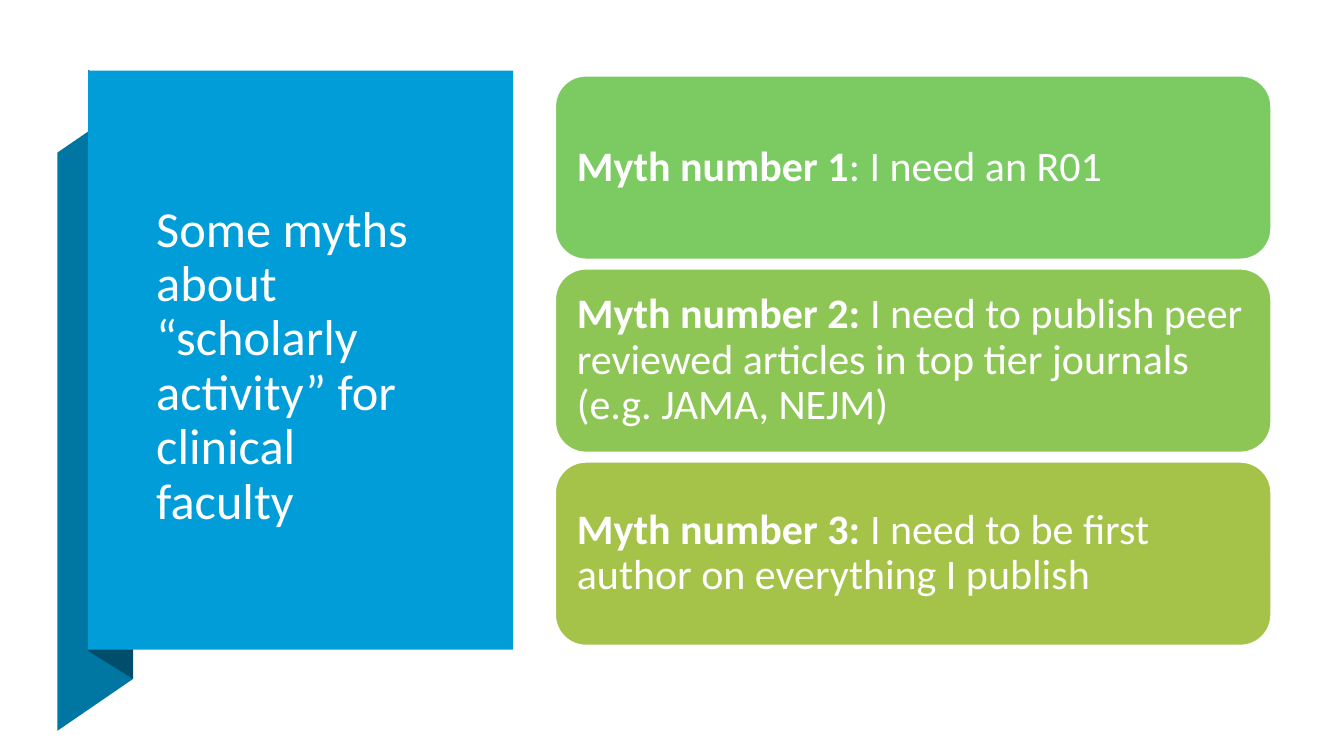
"""Build a slide listing three myths about scholarly activity beside a folded title ribbon."""

from dataclasses import dataclass

from pptx import Presentation
from pptx.dml.color import RGBColor
from pptx.enum.shapes import MSO_SHAPE
from pptx.enum.text import MSO_ANCHOR, MSO_AUTO_SIZE, PP_ALIGN
from pptx.util import Pt


@dataclass(frozen=True)
class Theme:
    font: str = "Calibri"
    title_size: int = 36
    myth_size: int = 30
    white: str = "FFFFFF"
    panel: str = "009DD9"
    ribbon: str = "0076A3"
    fold: str = "004E6C"
    myths: tuple = ("7CCA62", "8EC656", "A5C249")


theme = Theme()


def paint(shape, fill, line=None):
    shape.shadow.inherit = False
    shape.fill.solid()
    shape.fill.fore_color.rgb = RGBColor.from_string(fill)
    if line:
        shape.line.color.rgb = RGBColor.from_string(line)
        shape.line.width = Pt(1)
    else:
        shape.line.fill.background()


def write(shape, runs, size, frame_format):
    frame = shape.text_frame
    for name, value in frame_format.items():
        setattr(frame, name, value)
    paragraph = frame.paragraphs[0]
    paragraph.alignment = PP_ALIGN.LEFT
    paragraph.line_spacing = 0.9
    for text, bold in runs:
        run = paragraph.add_run()
        run.text = text
        font_format = {"name": theme.font, "size": Pt(size), "bold": bold}
        for name, value in font_format.items():
            setattr(run.font, name, value)
        run.font.color.rgb = RGBColor.from_string(theme.white)


presentation = Presentation()
presentation.slide_width = Pt(960)
presentation.slide_height = Pt(540)
slide = presentation.slides.add_slide(presentation.slide_layouts[5])

ribbon_parts = [
    (theme.ribbon, [(41.4, 521.5), (95.4, 484.7), (95.4, 72), (41.4, 108.7)]),
    (theme.fold, [(63, 465.1), (95.4, 485.3), (95.4, 71.3), (63, 50.4)]),
]
for color, points in ribbon_parts:
    builder = slide.shapes.build_freeform(*points[0], scale=Pt(1))
    builder.add_line_segments(points[1:], close=True)
    paint(builder.convert_to_shape(), color)

panel = slide.shapes.add_shape(MSO_SHAPE.RECTANGLE, Pt(63), Pt(50.5), Pt(303.5), Pt(413.5))
paint(panel, theme.panel)

title = slide.shapes.title
panel.element.addnext(title.element)
title_place = {"left": Pt(104.4), "top": Pt(120.2), "width": Pt(216.7), "height": Pt(283.7)}
for name, value in title_place.items():
    setattr(title, name, value)
frame_format = {
    "word_wrap": True,
    "auto_size": MSO_AUTO_SIZE.NONE,
    "vertical_anchor": MSO_ANCHOR.MIDDLE,
}
title_runs = [("Some myths about “scholarly activity” for clinical faculty", False)]
write(title, title_runs, theme.title_size, frame_format)

myths = [
    ("Myth number 1", ": I need an R01"),
    ("Myth number 2: ", "I need to publish peer reviewed articles in top tier journals (e.g. JAMA, NEJM)"),
    ("Myth number 3: ", "I need to be first author on everything I publish"),
]
sides = ("left", "top", "right", "bottom")
card_format = frame_format | {f"margin_{side}": Pt(9) for side in sides}
card_top, card_height, card_pitch = 54.2, 131, 137.9
for index, ((label, claim), color) in enumerate(zip(myths, theme.myths)):
    card = slide.shapes.add_shape(
        MSO_SHAPE.ROUNDED_RECTANGLE,
        Pt(396.7), Pt(card_top + index * card_pitch), Pt(511.2), Pt(card_height),
    )
    paint(card, color, theme.white)
    write(card, [(label, True), (claim, False)], theme.myth_size, card_format)

presentation.save("out.pptx")
